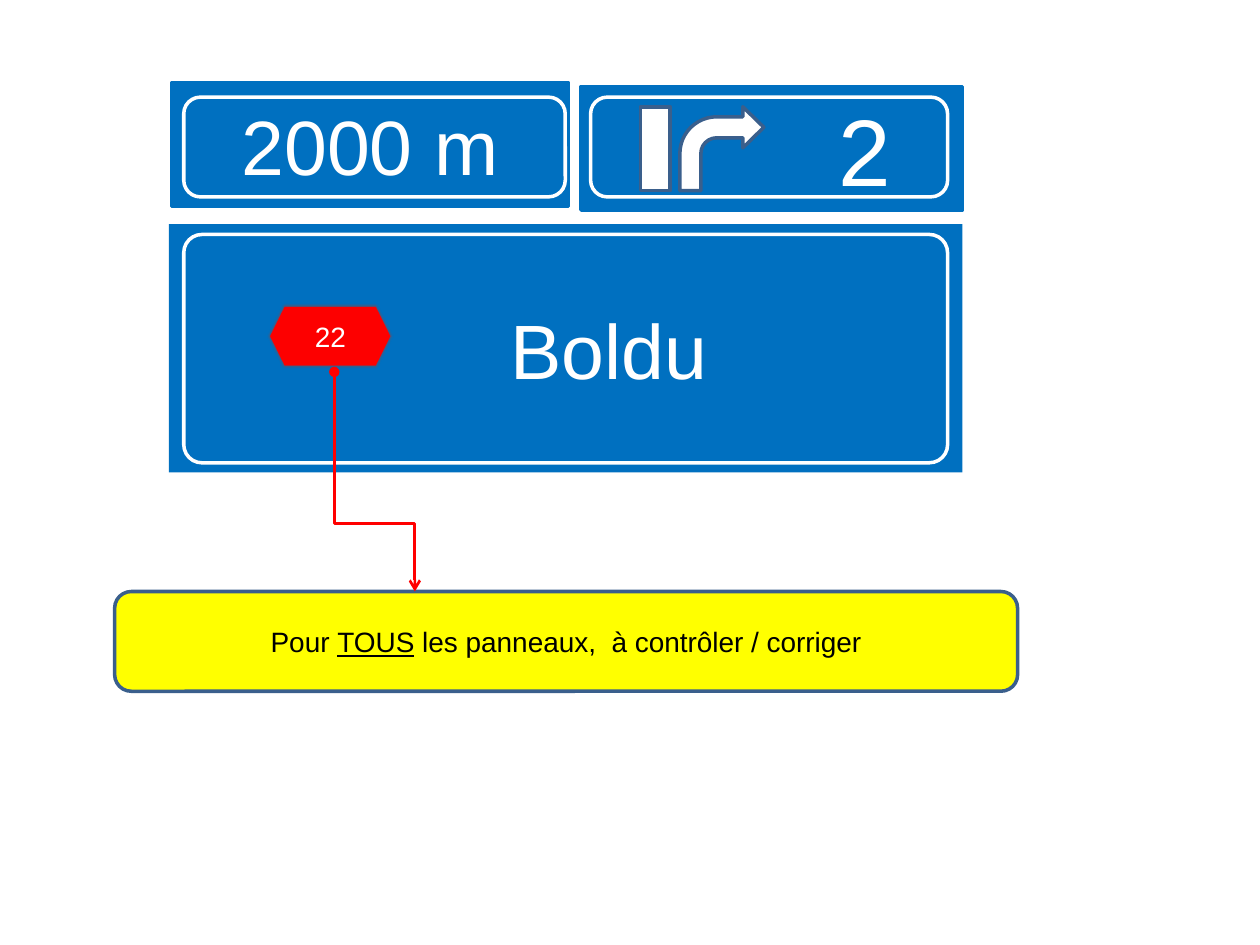
import pptx
import pptx.dml.color
import pptx.enum.shapes
import pptx.enum.text
import pptx.oxml
import pptx.oxml.ns
import pptx.util

Pt = pptx.util.Pt
RGBColor = pptx.dml.color.RGBColor
SHAPE = pptx.enum.shapes.MSO_SHAPE

BLUE = RGBColor(0x00, 0x70, 0xC0)
SLATE = RGBColor(0x3A, 0x5F, 0x8C)
WHITE = RGBColor(0xFF, 0xFF, 0xFF)
RED = RGBColor(0xFF, 0x00, 0x00)
YELLOW = RGBColor(0xFF, 0xFF, 0x00)
BLACK = RGBColor(0x00, 0x00, 0x00)


def add_xml(parent, xml):
    namespace = pptx.oxml.ns.nsdecls("a")
    tag, rest = xml.split(" ", 1)
    parent.append(pptx.oxml.parse_xml(f"{tag} {namespace} {rest}"))


def write(shape, text, size=16, color=WHITE, underlined=None, left_inset=7.2):
    """Centre the text in the shape, underlining one word if it is given."""
    frame = shape.text_frame
    frame.word_wrap = True
    frame.auto_size = pptx.enum.text.MSO_AUTO_SIZE.NONE
    frame.vertical_anchor = pptx.enum.text.MSO_ANCHOR.MIDDLE
    frame.margin_left = Pt(left_inset)
    paragraph = frame.paragraphs[0]
    paragraph.alignment = pptx.enum.text.PP_ALIGN.CENTER
    pieces = text.partition(underlined) if underlined else (text,)
    for piece in pieces:
        run = paragraph.add_run()
        run.text = piece
        run.font.name = "Arial"
        run.font.size = Pt(size)
        run.font.color.rgb = color
        if underlined:
            run.font.underline = piece == underlined


class RoadSign:
    line_width = 2

    def __init__(self, slide):
        self.slide = slide

    def shape(self, kind, box, fill=None, line=SLATE, adjustments=()):
        shape = self.slide.shapes.add_shape(kind, *map(Pt, box))
        shape.shadow.inherit = False
        if fill is None:
            shape.fill.background()
        else:
            shape.fill.solid()
            shape.fill.fore_color.rgb = fill
        shape.line.color.rgb = line
        shape.line.width = Pt(self.line_width)
        for index, value in enumerate(adjustments):
            shape.adjustments[index] = value
        return shape

    def destination(self, text, box):
        title = self.slide.shapes.title
        title.left, title.top, title.width, title.height = map(Pt, box)
        title.fill.solid()
        title.fill.fore_color.rgb = BLUE
        write(title, text, size=44, left_inset=57)

    def panel(self, text, box, size, left_inset=7.2):
        panel = self.shape(SHAPE.ROUNDED_RECTANGLE, box, BLUE, BLUE, [0])
        write(panel, text, size=size, left_inset=left_inset)

    def border(self, box, adjustments=()):
        self.shape(SHAPE.ROUNDED_RECTANGLE, box, None, WHITE, adjustments)

    def pointer(self, start, end, bend):
        """Draw an elbow that leaves start downwards and enters end downwards."""
        (x1, y1), (x2, y2) = start, end
        across, down = x2 - x1, y2 - y1
        left = (x1 + x2 - down) / 2
        top = (y1 + y2 - across) / 2
        pointer = self.slide.shapes.add_connector(
            pptx.enum.shapes.MSO_CONNECTOR.ELBOW,
            Pt(left), Pt(top), Pt(left + down), Pt(top + across))
        pointer.line.color.rgb = RED
        pointer.line.width = Pt(1.5)
        properties = pointer._element.spPr
        properties.xfrm.set("rot", str(270 * 60000))
        properties.xfrm.set("flipH", "1")
        guides = properties.prstGeom.get_or_add_avLst()
        add_xml(guides, f'<a:gd name="adj1" fmla="val {round(bend * 100000)}"/>')
        line = pointer.line._get_or_add_ln()
        add_xml(line, '<a:headEnd type="oval"/>')
        add_xml(line, '<a:tailEnd type="arrow"/>')
        add_xml(properties, "<a:effectLst />")


def main():
    deck = pptx.Presentation()
    deck.slide_width, deck.slide_height = Pt(720), Pt(540)
    sign = RoadSign(deck.slides.add_slide(deck.slide_layouts[5]))

    sign.destination("Boldu", (96.5, 128, 453.5, 142))
    sign.panel("2000 m", (98, 47.5, 227, 70.5), size=44)
    sign.panel("2", (332, 49.5, 218, 70.5), size=54, left_inset=113)

    sign.shape(SHAPE.RECTANGLE, (366, 61, 17, 48), WHITE)
    sign.shape(SHAPE.BENT_ARROW, (388.5, 61, 48, 48), WHITE,
               adjustments=(0.25, 0.245, 0.25, 0.438))

    route = sign.shape(SHAPE.HEXAGON, (153.5, 174.5, 70.5, 35), RED)
    write(route, "22")
    effects = route._element.spPr.find(pptx.oxml.ns.qn("a:effectLst"))
    add_xml(effects, '<a:softEdge rad="12700"/>')

    sign.border((105, 55.5, 218, 57))
    sign.border((337.5, 55.5, 204, 57))
    sign.border((105, 134, 436.5, 130.5), [0.08])

    remark = sign.shape(SHAPE.ROUNDED_RECTANGLE, (65.5, 338, 516, 57), YELLOW)
    write(remark, "Pour TOUS les panneaux,  à contrôler / corriger",
          color=BLACK, underlined="TOUS")
    sign.pointer((191, 212.5), (237, 338), bend=0.69)

    deck.save("out.pptx")


if __name__ == "__main__":
    main()
